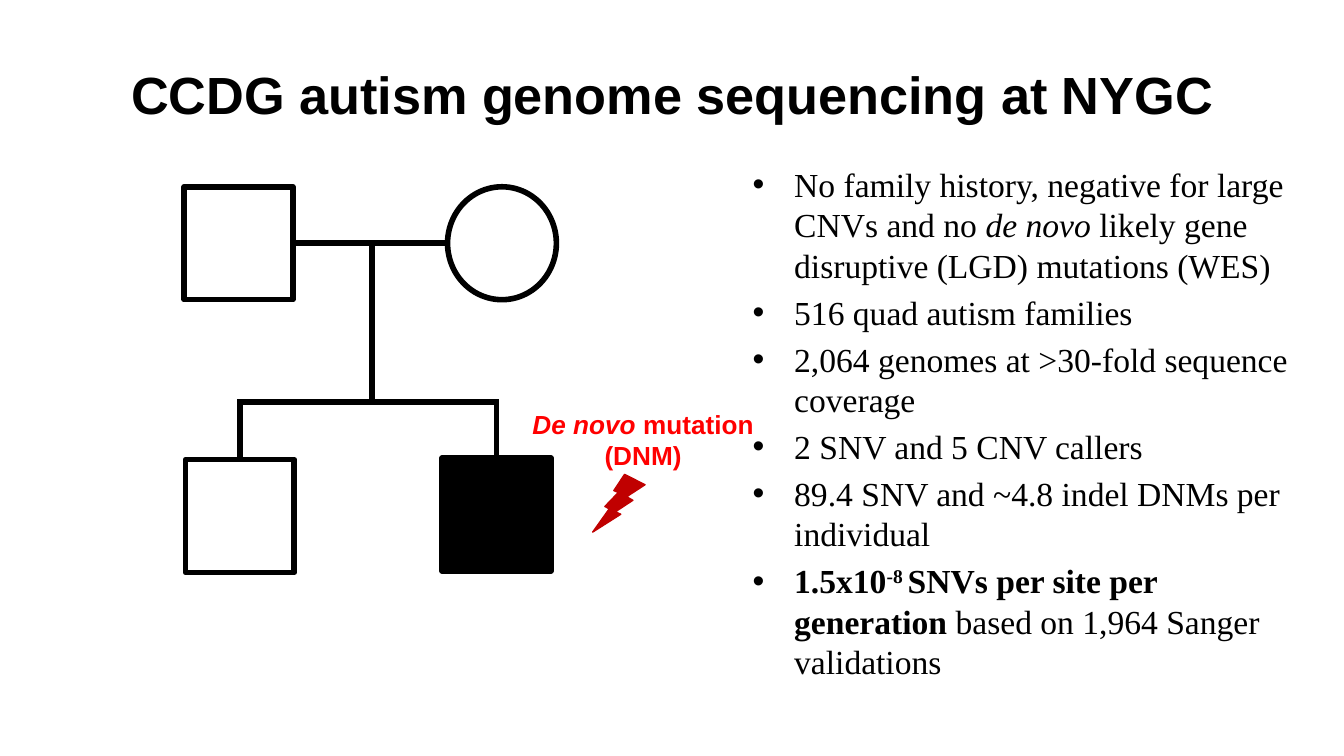
from lxml.etree import SubElement
from pptx import Presentation
from pptx.dml.color import RGBColor
from pptx.enum.shapes import MSO_CONNECTOR, MSO_SHAPE
from pptx.enum.text import MSO_ANCHOR, PP_ALIGN
from pptx.oxml.ns import qn
from pptx.util import Inches, Pt

BLACK = RGBColor(0x00, 0x00, 0x00)
WHITE = RGBColor(0xFF, 0xFF, 0xFF)
RED = RGBColor(0xFF, 0x00, 0x00)
DARK_RED = RGBColor(0xC0, 0x00, 0x00)

PERSON_WIDTH, PERSON_HEIGHT = 0.81, 0.84
PARENT_TOP = 1.39
MARRIAGE_Y = PARENT_TOP + PERSON_HEIGHT / 2
SIBLING_Y = 2.99
DESCENT_X = 2.77
HALF_STROKE = 0.02

# Each finding is a list of (text, style) runs
FINDINGS = [
    [("No family history, negative for large CNVs and no ", ""),
     ("de novo ", "italic"),
     ("likely gene disruptive (LGD) mutations (WES)", "")],
    [("516 quad autism families", "")],
    [("2,064 genomes at >30-fold sequence coverage", "")],
    [("2 SNV and 5 CNV callers", "")],
    [("89.4 SNV and ~4.8 indel DNMs per individual", "")],
    [("1.5x10", "bold"),
     ("-8 ", "bold superscript"),
     ("SNVs per site per generation ", "bold"),
     ("based on 1,964 Sanger validations", "")],
]


def add_text_frame(slide, left, top, width, height, side=0.1, edge=0.05):
    box = slide.shapes.add_textbox(
        Inches(left), Inches(top), Inches(width), Inches(height))
    frame = box.text_frame
    frame.word_wrap = True
    frame.margin_left = frame.margin_right = Inches(side)
    frame.margin_top = frame.margin_bottom = Inches(edge)
    return frame


def add_runs(paragraph, runs, font_name, size, color):
    for text, style in runs:
        run = paragraph.add_run()
        run.text = text
        run.font.name = font_name
        run.font.size = Pt(size)
        run.font.color.rgb = color
        run.font.bold = "bold" in style
        run.font.italic = "italic" in style
        if "superscript" in style:
            run.font._element.set("baseline", "30000")


def add_bullet(paragraph):
    properties = paragraph._p.get_or_add_pPr()
    properties.set("marL", str(Inches(0.31)))
    properties.set("indent", str(-Inches(0.31)))
    SubElement(properties, qn("a:buFont"), typeface="Arial")
    SubElement(properties, qn("a:buChar"), char="•")


def add_figure(slide, kind, left, top, width, height, fill, line, weight):
    figure = slide.shapes.add_shape(
        kind, Inches(left), Inches(top), Inches(width), Inches(height))
    figure.shadow.inherit = False
    figure.fill.solid()
    figure.fill.fore_color.rgb = fill
    figure.line.color.rgb = line
    figure.line.width = Pt(weight)
    SubElement(figure.line._get_or_add_ln(), qn("a:round"))
    return figure


def add_person(slide, kind, left, top, fill=WHITE):
    return add_figure(slide, kind, left, top, PERSON_WIDTH, PERSON_HEIGHT,
                      fill, BLACK, 3)


def add_link(slide, x1, y1, x2, y2):
    link = slide.shapes.add_connector(
        MSO_CONNECTOR.STRAIGHT, Inches(x1), Inches(y1), Inches(x2), Inches(y2))
    link.line.color.rgb = BLACK
    link.line.width = Pt(3)
    SubElement(link._element.spPr, qn("a:effectLst"))
    return link


def add_pedigree(slide):
    # Parents
    father = add_person(slide, MSO_SHAPE.RECTANGLE, 1.37, PARENT_TOP)
    add_person(slide, MSO_SHAPE.OVAL, 3.33, PARENT_TOP)
    marriage = add_link(slide, 2.18, MARRIAGE_Y, 3.33, MARRIAGE_Y)
    marriage.begin_connect(father, 3)

    # Descent to the children
    children = [(1.38, 3.42, WHITE), (3.29, 3.41, BLACK)]
    centers = [left + PERSON_WIDTH / 2 for left, _, _ in children]
    add_link(slide, DESCENT_X, MARRIAGE_Y, DESCENT_X, SIBLING_Y)
    add_link(slide, centers[0] - HALF_STROKE, SIBLING_Y,
             centers[1] + HALF_STROKE, SIBLING_Y)

    # Unaffected and affected child
    for (left, top, fill), center in zip(children, centers):
        child = add_person(slide, MSO_SHAPE.RECTANGLE, left, top, fill)
        drop = add_link(slide, center, SIBLING_Y - HALF_STROKE, center, top)
        drop.end_connect(child, 0)


def add_mutation(slide):
    label = add_text_frame(slide, 3.83, 2.99, 1.91, 0.57).paragraphs[0]
    label.alignment = PP_ALIGN.CENTER
    add_runs(label, [("De novo ", "bold italic"), ("mutation (DNM)", "bold")],
             "Arial", 14, RED)
    bolt = add_figure(slide, MSO_SHAPE.LIGHTNING_BOLT, 4.41, 3.53, 0.39, 0.43,
                      DARK_RED, DARK_RED, 0.75)
    bolt._element.spPr.xfrm.set("flipH", "1")


def add_findings(slide):
    frame = add_text_frame(slide, 5.52, 1.18, 4.3, 3.37, 0.08, 0.04)
    for index, runs in enumerate(FINDINGS):
        finding = frame.add_paragraph() if index else frame.paragraphs[0]
        finding.space_before = Pt(3.6)
        add_bullet(finding)
        add_runs(finding, runs, "Times New Roman", 18, BLACK)


def add_title(slide):
    frame = add_text_frame(slide, 0.5, 0.23, 9, 0.94, 0.08, 0.04)
    frame.vertical_anchor = MSO_ANCHOR.MIDDLE
    title = frame.paragraphs[0]
    title.alignment = PP_ALIGN.CENTER
    add_runs(title, [("CCDG autism genome sequencing at NYGC", "bold")],
             "Arial", 28, BLACK)


def main():
    presentation = Presentation()
    # Widescreen, 16:9
    presentation.slide_width = Inches(10)
    presentation.slide_height = Inches(10) * 9 // 16
    slide = presentation.slides.add_slide(presentation.slide_layouts[6])
    add_findings(slide)
    add_pedigree(slide)
    add_mutation(slide)
    add_title(slide)
    presentation.save("out.pptx")


if __name__ == "__main__":
    main()
